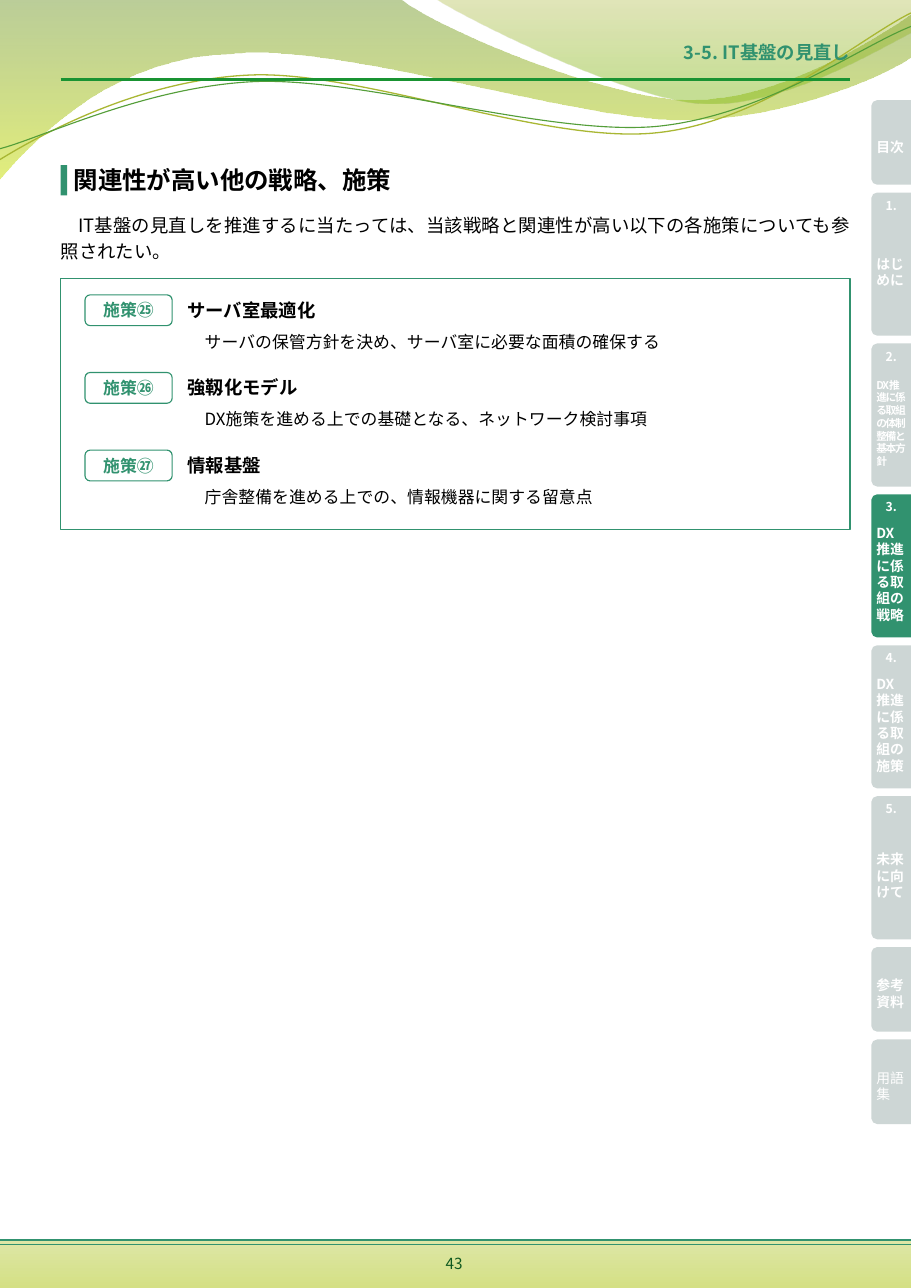
from lxml.etree import SubElement
from pptx import Presentation
from pptx.dml.color import RGBColor
from pptx.enum.shapes import MSO_CONNECTOR, MSO_SHAPE
from pptx.enum.text import MSO_ANCHOR as Anchor, MSO_AUTO_SIZE, PP_ALIGN as Align
from pptx.oxml.ns import qn
from pptx.util import Cm, Pt

FONT = "Noto Sans CJK JP"
COLORS = {
    name: RGBColor.from_string(value)
    for name, value in {
        "green": "31926F", "rule": "199332", "tab": "CDD6D5",
        "white": "FFFFFF", "black": "000000", "page": "0F591F",
        "leaf": "69921C", "lime": "CCE10F", "olive": "9BAA1A", "grass": "81BA16",
        "gold": "A9B733", "stem": "549E39", "footer_top": "DDE6A6", "footer_end": "D4E084",
    }.items()
}

presentation = Presentation()
presentation.slide_width, presentation.slide_height = Cm(21), Cm(29.7)
slide = presentation.slides.add_slide(presentation.slide_layouts[1])
shapes = slide.shapes


def write(shape, text, size, color, bold=False, align=Align.LEFT, anchor=Anchor.TOP,
          indent=0, pitch=1.19, tracking=0):
    frame = shape.text_frame
    frame_format = {
        "word_wrap": True, "auto_size": MSO_AUTO_SIZE.NONE, "vertical_anchor": anchor,
        "margin_left": 0, "margin_right": 0, "margin_top": 0, "margin_bottom": 0,
    }
    paragraph = frame.paragraphs[0]
    properties = paragraph._p.get_or_add_pPr()
    properties.set("marL", "0")
    properties.set("indent", str(Cm(indent)))
    SubElement(properties, qn("a:buNone"))
    run = paragraph.add_run()
    run.text = text
    paragraph_format = {"alignment": align, "line_spacing": Pt(size * pitch), "space_before": Pt(0)}
    font_format = {"name": FONT, "size": Pt(size), "bold": bold}
    for target, values in ((frame, frame_format), (paragraph, paragraph_format), (run.font, font_format)):
        for name, value in values.items():
            setattr(target, name, value)
    run.font.color.rgb = COLORS[color]
    run_properties = run._r.get_or_add_rPr()
    SubElement(run_properties, qn("a:ea")).set("typeface", FONT)
    if tracking:
        run_properties.set("spc", str(int(tracking * 100)))


def trace(start, segments, close=True):
    builder = shapes.build_freeform(Cm(start[0]), Cm(start[1]))
    points = [(Cm(x), Cm(y)) for segment in segments for x, y in segment]
    builder.add_line_segments(points, close=close)
    shape = builder.convert_to_shape()
    shape.shadow.inherit = False
    steps = iter(list(shape.element.iter(qn("a:lnTo"))))
    for segment in segments:
        first, *others = [next(steps) for point in segment]
        if others:
            first.tag = qn("a:cubicBezTo")
        for step in others:
            first.append(step[0])
            step.getparent().remove(step)
    return shape


broad_wave = trace((0, 0), [
    [(9.25, 0)],
    [(9.98, 0.61), (13.94, 2.31), (15.93, 2.31)],
    [(17.91, 2.31), (20.12, 0.94), (21, 0.33)],
    [(21, 1.32)],
    [(20.65, 1.6), (18.26, 2.77), (15.67, 2.77)],
    [(13.06, 2.74), (8, 1.02), (5.41, 1.24)],
    [(2.72, 1.3), (0.97, 3.02), (0, 4.14)],
])
corner_wave = trace((10.06, 0), [
    [(10.69, 0.41), (14.33, 2.26), (16.15, 2.39)],
    [(17.96, 2.51), (20.19, 1.17), (21, 0.76)],
    [(21, 0)],
])
footer = shapes.add_shape(MSO_SHAPE.RECTANGLE, 0, Cm(28.6), Cm(21), Cm(1.1))
footer.shadow.inherit = False
for shape, stops in (
    (broad_wave, (("leaf", 0, 45), ("lime", 1, 55))),
    (corner_wave, (("olive", 0, 30), ("grass", 0.8, 45))),
    (footer, (("footer_top", 0, 100), ("footer_end", 1, 100))),
):
    shape.fill.gradient()
    shape.fill.gradient_angle = 270
    for stop, (color, position, opacity) in zip(shape.fill.gradient_stops, stops):
        stop.color.rgb = COLORS[color]
        stop.position = position
    for node, (color, position, opacity) in zip(shape.element.iter(qn("a:srgbClr")), stops):
        SubElement(node, qn("a:alpha")).set("val", str(opacity * 1000))
    shape.line.fill.background()

for start, segments, color, width in (
    ((0, 3.68), [
        [(0.99, 3.07), (3.28, 1.83), (5.79, 1.73)],
        [(8.31, 1.63), (12.52, 3.3), (15.06, 3.07)],
        [(17.6, 2.84), (19.79, 0.89), (21, 0.3)],
    ], "gold", 0.85),
    ((0, 3.43), [
        [(0.97, 3.18), (3.4, 1.98), (5.92, 1.88)],
        [(8.43, 1.8), (12.57, 3.12), (15.09, 2.92)],
        [(17.6, 2.69), (19.79, 1.09), (21, 0.61)],
    ], "stem", 0.75),
):
    strand = trace(start, segments, close=False)
    strand.fill.background()
    strand.line.color.rgb = COLORS[color]
    strand.line.width = Pt(width)

for left, right, y, color, width in (
    (0, 21, 28.6, "green", 1.5),
    (0, 21, 28.7, "green", 1),
    (1.4, 19.6, 1.83, "rule", 1.5),
):
    rule = shapes.add_connector(MSO_CONNECTOR.STRAIGHT, Cm(left), Cm(y), Cm(right), Cm(y))
    rule.line.color.rgb = COLORS[color]
    rule.line.width = Pt(width)
    SubElement(rule.element.find(qn("p:spPr")), qn("a:effectLst"))

tab_top = 2.31
for number, label, size, bold, color in (
    ("", "目次", 9, True, "tab"),
    ("1.", "はじめに", 9, True, "tab"),
    ("2.", "DX推進に係る取組の体制整備と基本方針", 7, True, "tab"),
    ("3.", "DX推進に係る取組の戦略", 9, True, "green"),
    ("4.", "DX推進に係る取組の施策", 9, True, "tab"),
    ("5.", "未来に向けて", 9, True, "tab"),
    ("", "参考資料", 9, True, "tab"),
    ("", "用語集", 9, False, "tab"),
):
    height, offset, label_height = (3.3, 0.51, 2.65) if number else (1.95, 0.3, 1.55)
    bottom = tab_top + height
    tab = trace((21, bottom), [
        [(20.22, bottom)],
        [(20.15, bottom), (20.09, bottom - 0.06), (20.09, bottom - 0.12)],
        [(20.09, tab_top + 0.12)],
        [(20.09, tab_top + 0.06), (20.15, tab_top), (20.22, tab_top)],
        [(21, tab_top)],
    ])
    tab.fill.solid()
    tab.fill.fore_color.rgb = COLORS[color]
    tab.line.fill.background()
    if number:
        number_box = shapes.add_textbox(Cm(20.24), Cm(tab_top + 0.13), Cm(0.61), Cm(0.33))
        write(number_box, number, 8, "white", True, Align.CENTER, Anchor.MIDDLE)
    label_box = shapes.add_textbox(Cm(20.2), Cm(tab_top + offset), Cm(0.71), Cm(label_height))
    write(label_box, label, size, "white", bold, anchor=Anchor.MIDDLE, tracking=-0.8 if size == 7 else 0)
    tab_top = bottom + 0.18

frame_box = shapes.add_shape(MSO_SHAPE.RECTANGLE, Cm(1.4), Cm(6.42), Cm(18.2), Cm(5.79))
frame_box.shadow.inherit = False
frame_box.fill.background()
frame_box.line.color.rgb = COLORS["green"]
frame_box.line.width = Pt(1)

heading_bar = shapes.add_shape(MSO_SHAPE.RECTANGLE, Cm(1.4), Cm(3.81), Cm(0.15), Cm(0.7))
heading_bar.shadow.inherit = False
heading_bar.fill.solid()
heading_bar.fill.fore_color.rgb = COLORS["green"]
heading_bar.line.fill.background()

heading, section = slide.placeholders
for placeholder, left, top, width, height in (
    (heading, 1.7, 3.81, 17.91, 0.7),
    (section, 13.84, 0.96, 5.76, 0.5),
):
    for name, value in {"left": left, "top": top, "width": width, "height": height}.items():
        setattr(placeholder, name, Cm(value))
    shapes.element.append(placeholder.element)
write(heading, "関連性が高い他の戦略、施策", 16, "black", True)
write(section, "3-5. IT基盤の見直し", 12, "green", True, Align.RIGHT)

introduction = shapes.add_textbox(Cm(1.4), Cm(4.84), Cm(18.21), Cm(1.22))
write(introduction, "IT基盤の見直しを推進するに当たっては、当該戦略と関連性が高い以下の各施策についても参照されたい。",
      12, "black", align=Align.JUSTIFY, indent=0.4, pitch=1.42)

for row, (code, name, description) in enumerate((
    ("施策㉕", "サーバ室最適化", "サーバの保管方針を決め、サーバ室に必要な面積の確保する"),
    ("施策㉖", "強靱化モデル", "DX施策を進める上での基礎となる、ネットワーク検討事項"),
    ("施策㉗", "情報基盤", "庁舎整備を進める上での、情報機器に関する留意点"),
)):
    top = 6.8 + row * 1.79
    name_box = shapes.add_textbox(Cm(4.32), Cm(top + 0.1), Cm(4.67), Cm(0.51))
    write(name_box, name, 12, "black", True)
    badge = shapes.add_shape(MSO_SHAPE.ROUNDED_RECTANGLE, Cm(1.96), Cm(top), Cm(2.01), Cm(0.71))
    badge.shadow.inherit = False
    badge.fill.solid()
    badge.fill.fore_color.rgb = COLORS["white"]
    badge.line.color.rgb = COLORS["green"]
    badge.line.width = Pt(0.75)
    write(badge, code, 11, "green", True, Align.CENTER, Anchor.MIDDLE)
    description_box = shapes.add_textbox(Cm(4.32), Cm(top + 0.85), Cm(14.71), Cm(0.48))
    write(description_box, description, 11, "black", indent=0.4)

page_number = shapes.add_textbox(Cm(8.1), Cm(28.93), Cm(4.74), Cm(0.43))
write(page_number, "43", 10, "page", align=Align.CENTER, anchor=Anchor.MIDDLE)

presentation.save("out.pptx")
